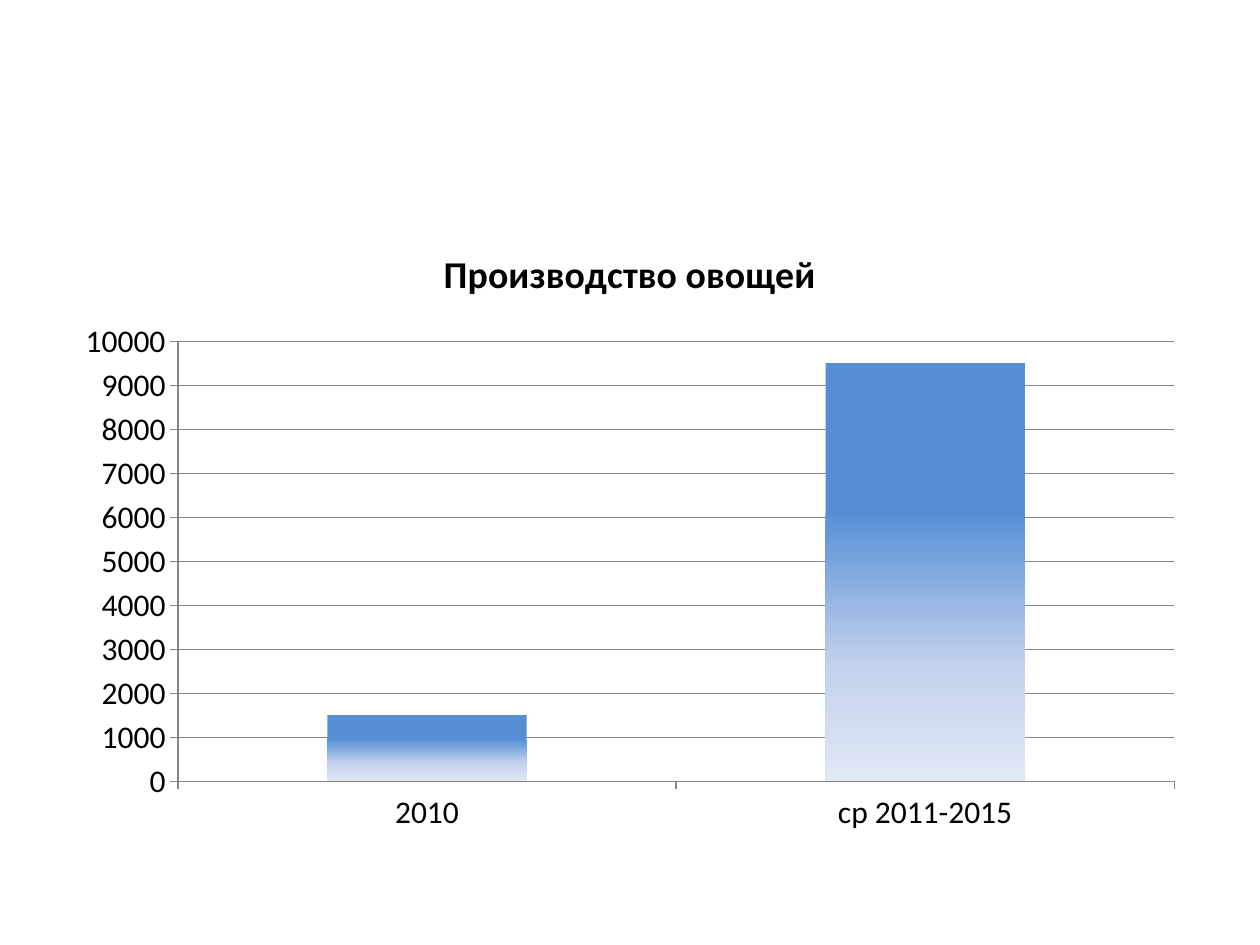
from copy import deepcopy
from dataclasses import dataclass

from pptx import Presentation
from pptx.chart.data import CategoryChartData
from pptx.dml.color import RGBColor
from pptx.enum.chart import XL_CHART_TYPE, XL_TICK_MARK
from pptx.util import Cm, Pt

COLUMN = XL_CHART_TYPE.COLUMN_CLUSTERED
OUTSIDE = XL_TICK_MARK.OUTSIDE
BLANK = 6


@dataclass(frozen=True)
class Theme:
    font: str = "Calibri"
    text: RGBColor = RGBColor(0, 0, 0)
    rule: RGBColor = RGBColor(0x86, 0x86, 0x86)
    body: Pt = Pt(18)
    title: Pt = Pt(21.6)
    hairline: Pt = Pt(0.75)
    bar_stops: tuple = ((0.35, "558ED5"), (0.72, "C2D1ED"), (1, "E1E8F5"))


class Deck:
    def __init__(self, theme):
        self.theme = theme
        self.prs = Presentation()
        self.prs.slide_width, self.prs.slide_height = Cm(25.4), Cm(19.05)
        self.s = None

    def slide(self):
        self.s = self.prs.slides.add_slide(self.prs.slide_layouts[BLANK])

    def style_font(self, font, size, bold=False):
        font.name, font.size, font.bold = self.theme.font, size, bold
        font.color.rgb = self.theme.text

    def style_line(self, line):
        line.color.rgb = self.theme.rule
        line.width = self.theme.hairline

    def style_bars(self, series):
        fill = series.format.fill
        fill.gradient()
        fill.gradient_angle = 270
        stops = series._element.xpath(".//a:gsLst")[0]
        stops.append(deepcopy(stops[-1]))
        for stop, (position, color) in zip(fill.gradient_stops, self.theme.bar_stops):
            stop.position = position
            stop.color.rgb = RGBColor.from_string(color)

    def column_chart(self, title, categories, values, left, top, width, height):
        data = CategoryChartData()
        data.categories = categories
        data.add_series(title, values)
        chart = self.s.shapes.add_chart(COLUMN, left, top, width, height, data).chart
        self.style_font(chart.font, self.theme.body)
        chart.has_legend = False
        chart.has_title = True
        r = chart.chart_title.text_frame.paragraphs[0].add_run()
        r.text = title
        self.style_font(r.font, self.theme.title, bold=True)
        for axis in (chart.category_axis, chart.value_axis):
            axis.major_tick_mark = OUTSIDE
            self.style_line(axis.format.line)
        axis = chart.value_axis
        axis.minimum_scale, axis.maximum_scale, axis.major_unit = 0, 10000, 1000
        self.style_line(axis.major_gridlines.format.line)
        plot = chart.plots[0]
        plot.gap_width = 150
        plot.vary_by_categories = False
        self.style_bars(plot.series[0])


def main():
    deck = Deck(Theme())
    deck.slide()
    deck.column_chart(
        "Производство овощей",
        ["2010", "ср 2011-2015"],
        [1500, 9500],
        Cm(1.27), Cm(4.45), Cm(22.86), Cm(12.57),
    )
    deck.prs.save("out.pptx")


if __name__ == "__main__":
    main()
